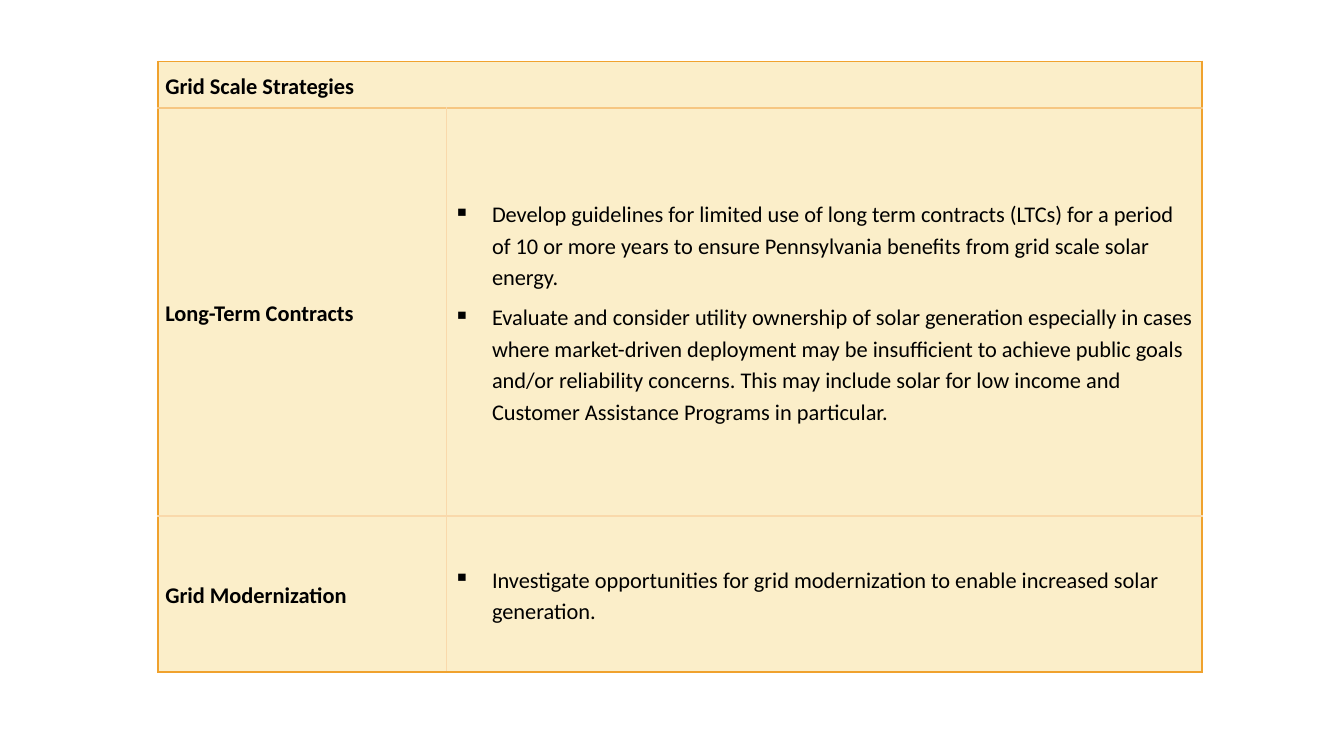
from dataclasses import dataclass

from lxml.etree import SubElement
from pptx import Presentation
from pptx.dml.color import RGBColor
from pptx.enum.text import MSO_ANCHOR as Anchor
from pptx.oxml import parse_xml
from pptx.oxml.ns import nsdecls, qn
from pptx.table import Table, _Cell as Cell
from pptx.util import Emu, Inches, Pt


@dataclass(frozen=True)
class Line:
    color: str
    points: float


@dataclass(frozen=True)
class Theme:
    font: str = "Calibri"
    size: float = 16
    text: str = "000000"
    fill: str = "FBEEC9"
    outer: Line = Line("F0A22E", 1.5)
    header: Line = Line("F6C681", 1.5)
    inner: Line = Line("F9D9AB", 1)
    line_spacing: float = 1.15
    before: float = 10
    after: float = 6


@dataclass(frozen=True)
class Strategy:
    name: str
    actions: tuple[str, ...]


THEME = Theme()
SLIDE_W, SLIDE_H = Inches(13.33), Inches(7.5)

# Table grid, in percent of the slide's width and height
LEFT, TOP = 11.78, 8.13
COLS = (21.46, 56.19)
ROWS = (6.13, 54, 20.67)

TITLE = "Grid Scale Strategies"
STRATEGIES = (
    Strategy("Long-Term Contracts", (
        "Develop guidelines for limited use of long term contracts (LTCs) for a period "
        "of 10 or more years to ensure Pennsylvania benefits from grid scale solar energy.",
        "Evaluate and consider utility ownership of solar generation especially in cases "
        "where market-driven deployment may be insufficient to achieve public goals "
        "and/or reliability concerns. This may include solar for low income and "
        "Customer Assistance Programs in particular.",
    )),
    Strategy("Grid Modernization", (
        "Investigate opportunities for grid modernization to enable increased solar "
        "generation.",
    )),
)


def across(percent: float) -> Emu:
    return Emu(round(SLIDE_W * percent / 100))


def down(percent: float) -> Emu:
    return Emu(round(SLIDE_H * percent / 100))


def write(cell: Cell, texts: tuple[str, ...], bulleted: bool = False) -> None:
    """Bold label, or a list of regular bulleted paragraphs."""
    tf = cell.text_frame
    for i, text in enumerate(texts):
        p = tf.add_paragraph() if i else tf.paragraphs[0]
        p.line_spacing = THEME.line_spacing
        p.space_before = Pt(0 if i else THEME.before)
        r = p.add_run()
        r.text = text
        r.font.name, r.font.size = THEME.font, Pt(THEME.size)
        r.font.bold = not bulleted
        r.font.color.rgb = RGBColor.from_string(THEME.text)
        if bulleted:
            p.space_after = Pt(THEME.after)
            pPr = p._p.get_or_add_pPr()
            pPr.set("marL", str(Inches(0.38)))
            pPr.set("indent", str(-Inches(0.38)))
            SubElement(pPr, qn("a:buChar")).set("char", "▪")


def style(cell: Cell, row: int, col: int) -> None:
    """Margins, fill and borders that follow from the cell's place."""
    cell.vertical_anchor = Anchor.MIDDLE
    cell.margin_left = cell.margin_right = Inches(0.07)
    cell.margin_top = cell.margin_bottom = 0
    cell.fill.solid()
    cell.fill.fore_color.rgb = RGBColor.from_string(THEME.fill)

    def horizontal(edge: int) -> Line:
        if edge in (0, len(ROWS)):
            return THEME.outer
        return THEME.header if edge == 1 else THEME.inner

    def vertical(edge: int) -> Line:
        return THEME.outer if edge in (0, len(COLS)) else THEME.inner

    borders = {
        "lnL": vertical(0 if row == 0 else col),
        "lnR": vertical(len(COLS) if row == 0 else col + 1),
        "lnT": horizontal(row),
        "lnB": horizontal(row + 1),
    }
    tcPr = cell._tc.get_or_add_tcPr()
    for i, (tag, line) in enumerate(borders.items()):
        tcPr.insert(i, parse_xml(
            f'<a:{tag} {nsdecls("a")} w="{Pt(line.points)}"><a:solidFill>'
            f'<a:srgbClr val="{line.color}"/></a:solidFill></a:{tag}>'))


def fill_table(table: Table) -> None:
    table.first_row = table.horz_banding = False
    for column, width in zip(table.columns, COLS):
        column.width = across(width)
    for row, height in zip(table.rows, ROWS):
        row.height = down(height)
    for i in range(len(ROWS)):
        for j in range(len(COLS)):
            style(table.cell(i, j), i, j)

    # Header across both columns
    table.cell(0, 0).merge(table.cell(0, 1))
    write(table.cell(0, 0), (TITLE,))

    # One row per strategy
    for i, strategy in enumerate(STRATEGIES, start=1):
        write(table.cell(i, 0), (strategy.name,))
        write(table.cell(i, 1), strategy.actions, bulleted=True)


def main() -> None:
    prs = Presentation()
    prs.slide_width, prs.slide_height = SLIDE_W, SLIDE_H
    s = prs.slides.add_slide(prs.slide_layouts[6])
    sp = s.shapes.add_table(len(ROWS), len(COLS), across(LEFT), down(TOP),
                            across(sum(COLS)), down(sum(ROWS)))
    fill_table(sp.table)
    prs.save("out.pptx")


if __name__ == "__main__":
    main()
